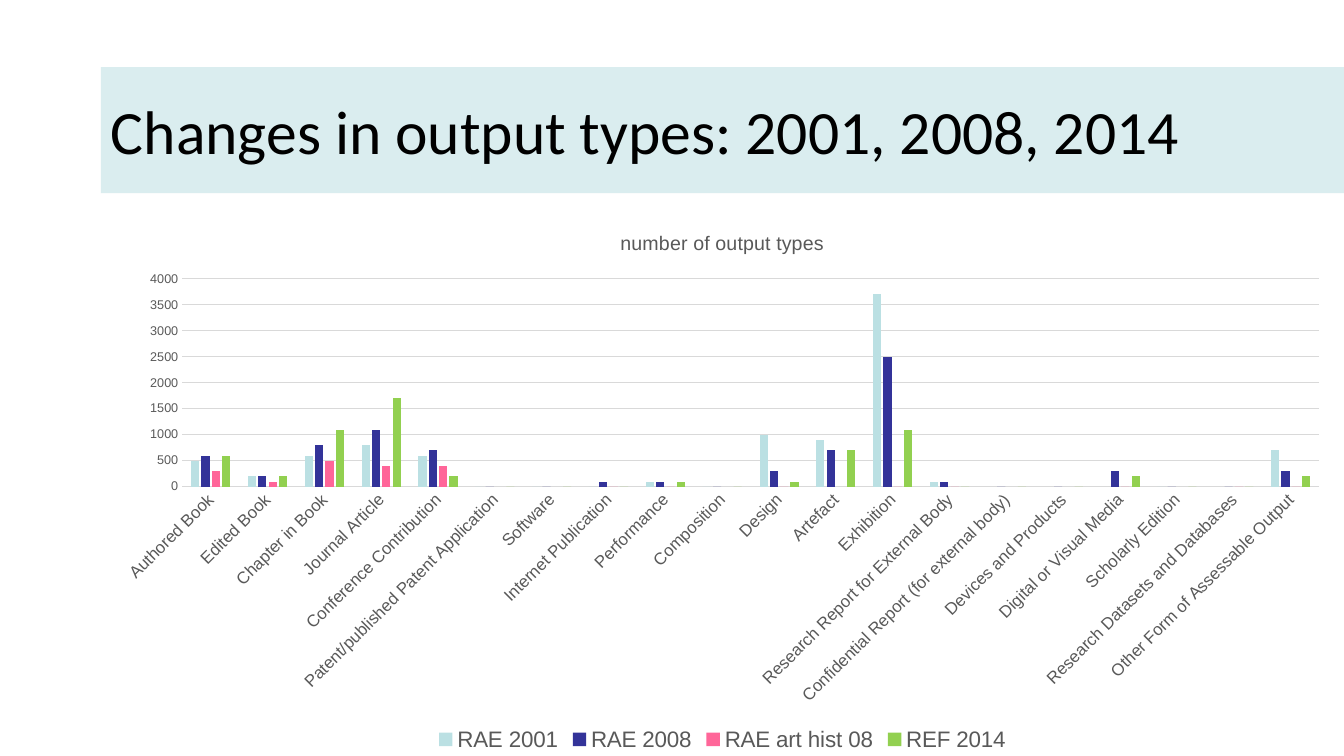
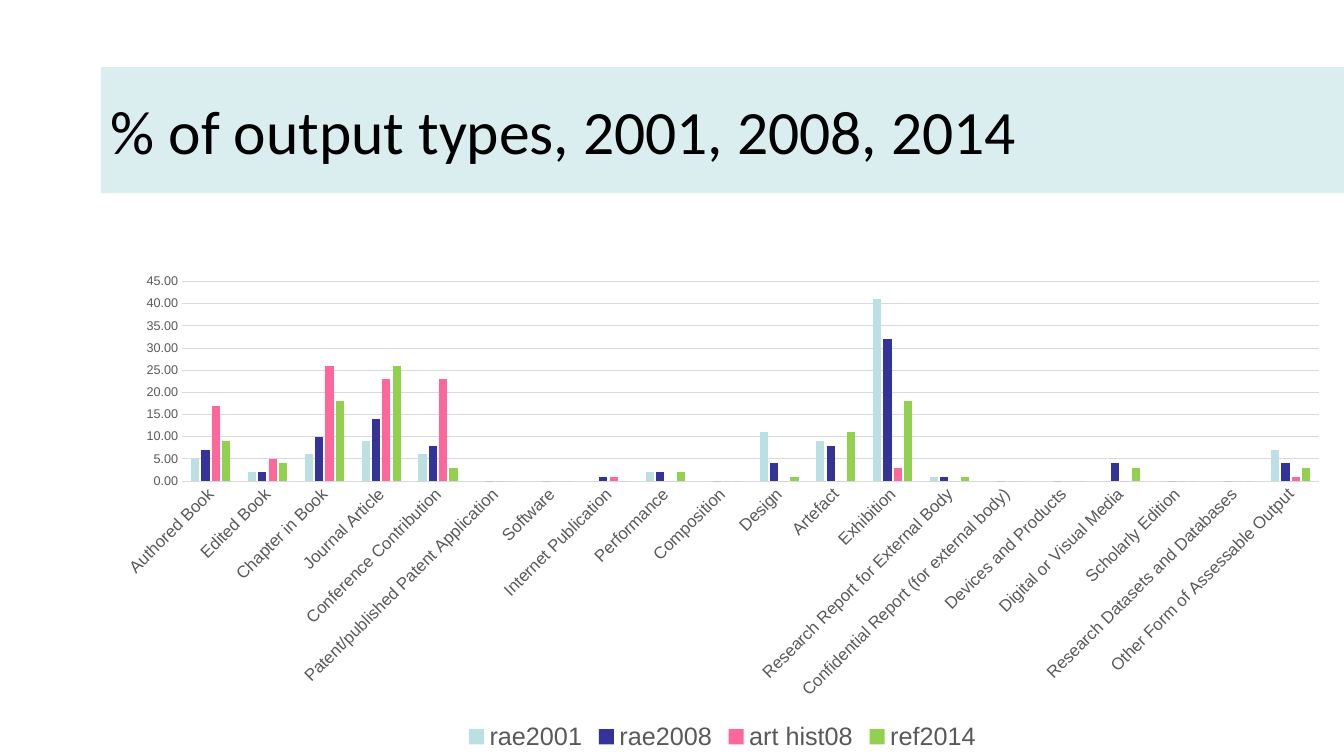
from lxml import etree
from pptx import Presentation
from pptx.chart.data import CategoryChartData
from pptx.dml.color import RGBColor
from pptx.enum.chart import XL_CHART_TYPE as ChartType
from pptx.enum.chart import XL_LEGEND_POSITION as LegendPos
from pptx.enum.chart import XL_TICK_MARK as Tick
from pptx.enum.text import MSO_ANCHOR as Anchor
from pptx.enum.text import MSO_AUTO_SIZE as AutoSize
from pptx.enum.text import PP_ALIGN as Align
from pptx.oxml.ns import qn
from pptx.util import Emu, Pt

WIDTH, HEIGHT = 1280, 720
LEFT = 96
BAND, BLACK, GREY, RULE = "DAEDEF", "000000", "595959", "D9D9D9"
SERIES_COLOURS = ["BBE0E3", "333399", "FF6699", "92D050"]

OUTPUT_TYPES = [
    "Authored Book", "Edited Book", "Chapter in Book", "Journal Article",
    "Conference Contribution", "Patent/published Patent Application",
    "Software", "Internet Publication", "Performance", "Composition",
    "Design", "Artefact", "Exhibition", "Research Report for External Body",
    "Confidential Report (for external body)", "Devices and Products",
    "Digital or Visual Media", "Scholarly Edition",
    "Research Datasets and Databases", "Other Form of Assessable Output",
]

COUNTS = {
    "RAE 2001": [500, 200, 600, 800, 600, 0, 0, 0, 100, 0, 1000, 900, 3700,
                 100, None, None, None, 0, None, 700],
    "RAE 2008": [600, 200, 800, 1100, 700, 0, 0, 100, 100, 0, 300, 700, 2500,
                 100, 0, 0, 300, 0, 0, 300],
    "RAE art hist 08": [300, 100, 500, 400, 400, None, None, 0, 0, None, 0,
                        None, 0, 0, None, None, 0, None, 0, 0],
    "REF 2014": [600, 200, 1100, 1700, 200, 0, 0, 0, 100, 0, 100, 700, 1100,
                 0, 0, 0, 200, 0, 0, 200],
}

PERCENTAGES = {
    "rae2001": [5, 2, 6, 9, 6, 0, 0, 0, 2, 0, 11, 9, 41, 1, 0, 0, 0, 0, 0, 7],
    "rae2008": [7, 2, 10, 14, 8, 0, 0, 1, 2, 0, 4, 8, 32, 1, 0, 0, 4, 0, 0, 4],
    "art hist08": [17, 5, 26, 23, 23, 0, 0, 1, 0, 0, 0, 0, 3, 0, 0, 0, 0, 0,
                   0, 1],
    "ref2014": [9, 4, 18, 26, 3, 0, 0, 0, 2, 0, 1, 11, 18, 1, 0, 0, 3, 0, 0, 3],
}


def px(n):
    return Emu(n * 9525)


def rgb(colour):
    return RGBColor.from_string(colour)


def set_font(font, size, colour, name="Arial"):
    font.size, font.name, font.bold = Pt(size), name, False
    font.color.rgb = rgb(colour)


def add_titled_slide(prs, title):
    s = prs.slides.add_slide(prs.slide_layouts[5])
    sp = s.shapes.title
    sp.left, sp.top, sp.width, sp.height = map(px, (LEFT, 64, WIDTH - LEFT, 120))
    sp.fill.solid()
    sp.fill.fore_color.rgb = rgb(BAND)
    tf = sp.text_frame
    tf.word_wrap, tf.auto_size = True, AutoSize.NONE
    tf.vertical_anchor = Anchor.MIDDLE
    p = tf.paragraphs[0]
    p.alignment = Align.LEFT
    r = p.add_run()
    r.text = title
    set_font(r.font, 44, BLACK, "Calibri")
    return s


def set_layout(parent, index, target=None, **percents):
    """Place a chart part by percentages of the chart's width and height."""
    for old in parent.findall(qn("c:layout")):
        parent.remove(old)
    layout = etree.Element(qn("c:layout"))
    parent.insert(index, layout)
    manual = etree.SubElement(layout, qn("c:manualLayout"))
    settings = {"layoutTarget": target} if target else {}
    settings.update(xMode="edge", yMode="edge")
    settings.update((tag, value / 100) for tag, value in percents.items())
    for tag, value in settings.items():
        etree.SubElement(manual, qn(f"c:{tag}")).set("val", str(value))


def style_axes(chart, top_value, step, number_format):
    cat, val = chart.category_axis, chart.value_axis
    for axis, size in ((cat, 12), (val, 9)):
        axis.major_tick_mark = axis.minor_tick_mark = Tick.NONE
        set_font(axis.tick_labels.font, size, GREY)
    val.minimum_scale, val.maximum_scale, val.major_unit = 0, top_value, step
    val.tick_labels.number_format = number_format
    val.tick_labels.number_format_is_linked = False
    val.format.line.fill.background()
    val.has_major_gridlines = True
    for line in (cat.format.line, val.major_gridlines.format.line):
        line.color.rgb, line.width = rgb(RULE), Pt(0.75)
    body = chart.element.find(f".//{qn('c:catAx')}/{qn('c:txPr')}/{qn('a:bodyPr')}")
    body.set("rot", "-2700000")
    body.set("vert", "horz")


def add_column_chart(s, top, series, top_value, step, number_format,
                     legend_size, plot_height, title=None):
    data = CategoryChartData()
    data.categories = OUTPUT_TYPES
    for name, values in series.items():
        data.add_series(name, values)
    frame = s.shapes.add_chart(ChartType.COLUMN_CLUSTERED, px(LEFT), px(top),
                               px(WIDTH - LEFT), px(HEIGHT - top), data)
    chart = frame.chart
    set_font(chart.font, 10, BLACK)
    plot = chart.plots[0]
    plot.gap_width, plot.overlap, plot.vary_by_categories = 219, -27, False
    for ser, colour in zip(plot.series, SERIES_COLOURS):
        ser.format.fill.solid()
        ser.format.fill.fore_color.rgb = rgb(colour)
        ser.invert_if_negative = False
    style_axes(chart, top_value, step, number_format)
    chart.has_legend = True
    chart.legend.position = LegendPos.BOTTOM
    chart.legend.include_in_layout = False
    set_font(chart.legend.font, legend_size, GREY)
    chart.has_title = title is not None
    if title:
        r = chart.chart_title.text_frame.paragraphs[0].add_run()
        r.text = title
        set_font(r.font, 14, GREY)
        set_layout(chart.chart_title.element, 1, x=41.5, y=2.9)
    set_layout(chart.element.find(f".//{qn('c:plotArea')}"), 0, "inner",
               x=6.55, y=12.45, w=91.45, h=plot_height)


def main():
    prs = Presentation()
    prs.slide_width, prs.slide_height = px(WIDTH), px(HEIGHT)
    s = add_titled_slide(prs, "Changes in output types: 2001, 2008, 2014")
    add_column_chart(s, 201, COUNTS, 4000, 500, "General", 16, 38.15,
                     "number of output types")
    s = add_titled_slide(prs, "% of output types, 2001, 2008, 2014")
    add_column_chart(s, 204, PERCENTAGES, 45, 5, "0.00", 18, 36.8)
    prs.save("out.pptx")


if __name__ == "__main__":
    main()
